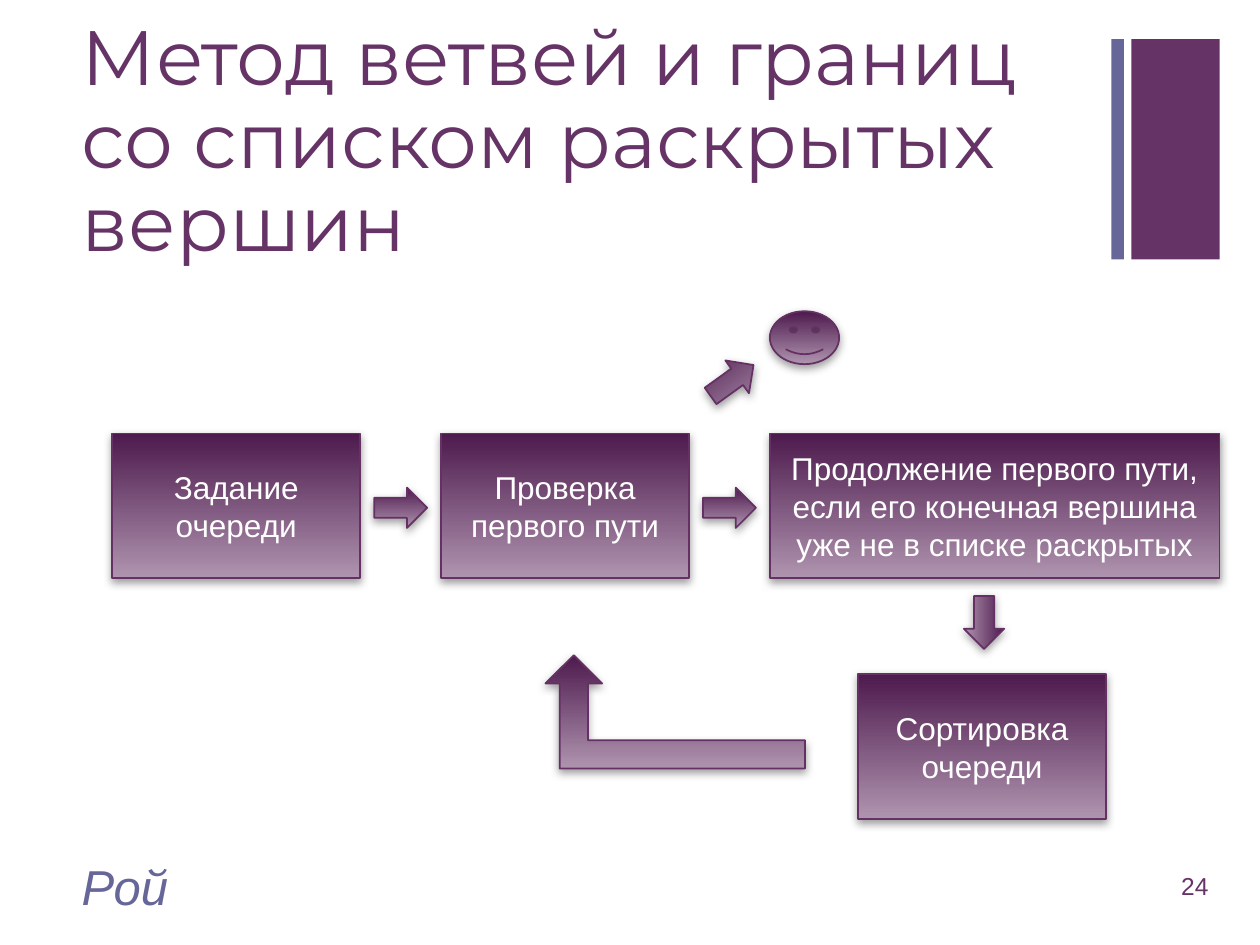
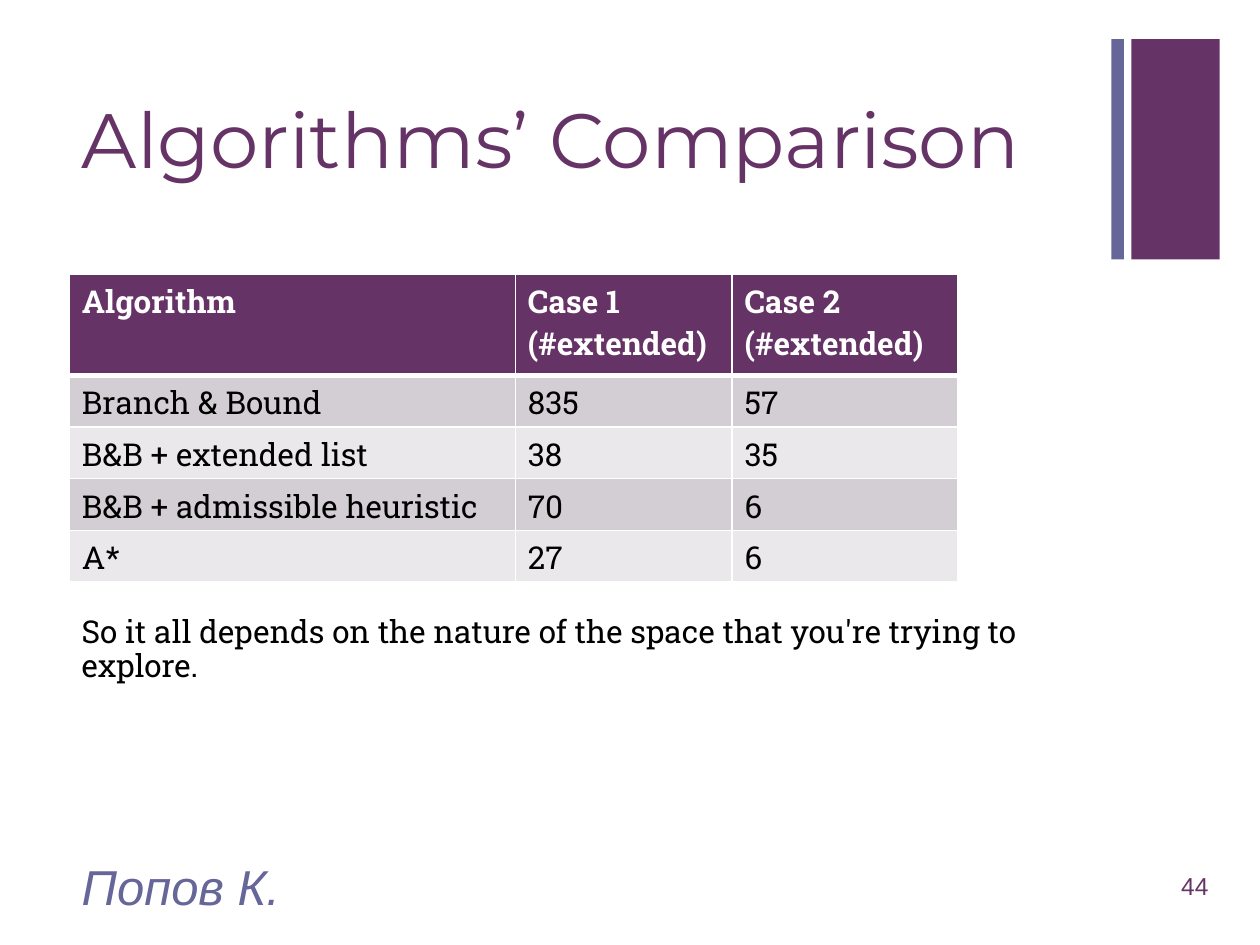
import lxml.etree
import pptx
import pptx.dml.color
import pptx.enum.shapes
import pptx.enum.text
import pptx.oxml.ns
import pptx.util

Inches = pptx.util.Inches
Pt = pptx.util.Pt
Color = pptx.dml.color.RGBColor.from_string
Shapes = pptx.enum.shapes.MSO_SHAPE
Align = pptx.enum.text.PP_ALIGN
Anchor = pptx.enum.text.MSO_ANCHOR
qn = pptx.oxml.ns.qn

THEME = {
    "plum": "663366",
    "slate": "666699",
    "outline": "653165",
    "gradient": ("4D1A4D", "AF94AF"),
    "shadow": "808080",
    "grid": "FFFFFF",
    "bands": ("EAE8EA", "D3CED3"),
    "title": {"color": "663366", "font": {"name": "Montserrat", "size": Pt(44)},
              "paragraph": {"alignment": Align.LEFT, "line_spacing": 0.9}},
    "author": {"color": "666699", "font": {"name": "Arial", "size": Pt(28), "italic": True},
               "paragraph": {"alignment": Align.LEFT}},
    "number": {"color": "663366", "font": {"name": "Arial", "size": Pt(14)},
               "paragraph": {"alignment": Align.RIGHT}},
    "step": {"color": "FFFFFF", "font": {"name": "Arial", "size": Pt(18)},
             "paragraph": {"alignment": Align.CENTER}},
    "head": {"color": "FFFFFF", "font": {"name": "Roboto Slab", "size": Pt(18), "bold": True},
             "paragraph": {"alignment": Align.LEFT}},
    "cell": {"color": "000000", "font": {"name": "Roboto Slab", "size": Pt(18), "bold": False},
             "paragraph": {"alignment": Align.LEFT}},
    "note": {"color": "000000", "font": {"name": "Roboto Slab", "size": Pt(18)},
             "paragraph": {"alignment": Align.LEFT, "line_spacing": 0.9}},
}


def write(text_frame, text, style_name, anchor=Anchor.MIDDLE):
    """Fill a text frame, one paragraph per line of text, in a theme style."""
    style = THEME[style_name]
    text_frame.text = text
    text_frame.word_wrap = True
    text_frame.vertical_anchor = anchor
    for paragraph in text_frame.paragraphs:
        for name, value in style["paragraph"].items():
            setattr(paragraph, name, value)
        for run in paragraph.runs:
            run.font.color.rgb = Color(style["color"])
            for name, value in style["font"].items():
                setattr(run.font, name, value)


def add_flow_shape(slide, kind, left, top, width, height, rotation=0):
    """Add a shape with the plum gradient, thin outline and soft shadow."""
    shape = slide.shapes.add_shape(
        kind, Inches(left), Inches(top), Inches(width), Inches(height))
    shape.rotation = rotation
    shape.fill.gradient()
    shape.fill.gradient_angle = 270
    for position, (stop, color) in enumerate(zip(shape.fill.gradient_stops, THEME["gradient"])):
        stop.position = position
        stop.color.rgb = Color(color)
    shape.line.color.rgb = Color(THEME["outline"])
    shape.line.width = Pt(1)
    shape.shadow.inherit = False
    effects = shape.element.spPr.find(qn("a:effectLst"))
    shadow = lxml.etree.SubElement(
        effects, qn("a:outerShdw"), blurRad=str(Pt(5)), dist=str(Pt(2)),
        dir="5400000", rotWithShape="0")
    color = lxml.etree.SubElement(shadow, qn("a:srgbClr"), val=THEME["shadow"])
    lxml.etree.SubElement(color, qn("a:alpha"), val="75000")
    return shape


presentation = pptx.Presentation()
presentation.slide_width = Inches(10)
presentation.slide_height = Inches(7.5)

# Shared frame: side bars, title, author and slide number
MARGIN = 0.55
FOOTER_TOP, FOOTER_HEIGHT = 6.83, 0.4
slides = []
for title, author, number in (
    ("Метод ветвей и границ со списком раскрытых вершин", "Рой", "24"),
    ("Algorithms’ Comparison", "Попов К.", "44"),
):
    slide = presentation.slides.add_slide(presentation.slide_layouts[5])
    slides.append(slide)
    for left, width, color in ((8.98, 0.7, "plum"), (8.82, 0.1, "slate")):
        bar = slide.shapes.add_shape(
            Shapes.RECTANGLE, Inches(left), Inches(0.31), Inches(width), Inches(1.75))
        bar.shadow.inherit = False
        bar.fill.solid()
        bar.fill.fore_color.rgb = Color(THEME[color])
        bar.line.fill.background()

    title_shape = slide.shapes.title
    title_place = {"left": MARGIN, "top": 0.53, "width": 8.26, "height": 1.22}
    for name, value in title_place.items():
        setattr(title_shape, name, Inches(value))
    title_shape.text_frame.auto_size = pptx.enum.text.MSO_AUTO_SIZE.NONE
    write(title_shape.text_frame, title, "title")

    for text, style_name, left, width in (
        (author, "author", MARGIN, 6.7), (number, "number", 9.08, 0.61),
    ):
        footer = slide.shapes.add_textbox(
            Inches(left), Inches(FOOTER_TOP), Inches(width), Inches(FOOTER_HEIGHT))
        write(footer.text_frame, text, style_name)

flow_slide, table_slide = slides

# Search loop: steps and the arrows between them
STEP_WIDTH, STEP_HEIGHT, STEP_TOP, STEP_PITCH = 1.97, 1.15, 3.44, 2.61
FIRST_STEP, SECOND_STEP, THIRD_STEP = (0.89 + STEP_PITCH * i for i in range(3))
for text, left, top, width in (
    ("Задание очереди", FIRST_STEP, STEP_TOP, STEP_WIDTH),
    ("Проверка первого пути", SECOND_STEP, STEP_TOP, STEP_WIDTH),
    ("Продолжение первого пути,\nесли его конечная вершина уже не в списке раскрытых",
     THIRD_STEP, STEP_TOP, 3.57),
    ("Сортировка очереди", 6.81, 5.35, STEP_WIDTH),
):
    step = add_flow_shape(flow_slide, Shapes.RECTANGLE, left, top, width, STEP_HEIGHT)
    write(step.text_frame, text, "step")

for left, top, rotation in (
    (2.97, 3.87, 0), (2.97 + STEP_PITCH, 3.87, 0), (5.6, 2.86, 324.2), (7.6, 4.78, 90),
):
    add_flow_shape(flow_slide, Shapes.RIGHT_ARROW, left, top, 0.42, 0.32, rotation)

add_flow_shape(flow_slide, Shapes.SMILEY_FACE, THIRD_STEP, 2.47, 0.55, 0.42)
return_arrow = add_flow_shape(flow_slide, Shapes.BENT_UP_ARROW, 4.33, 5.2, 2.06, 0.9)
return_arrow.element.spPr.get_or_add_xfrm().set("flipH", "1")

# Comparison table
rows = (
    ("Algorithm", "Case 1 (#extended)", "Case 2 (#extended)"),
    ("Branch & Bound", "835", "57"),
    ("B&B + extended list", "38", "35"),
    ("B&B + admissible heuristic", "70", "6"),
    ("A*", "27", "6"),
)
column_widths = (3.54, 1.72, 1.79)
HEAD_HEIGHT, ROW_HEIGHT = 0.8, 0.41
table = table_slide.shapes.add_table(
    len(rows), len(column_widths), Inches(MARGIN), Inches(2.18),
    Inches(sum(column_widths)), Inches(HEAD_HEIGHT + ROW_HEIGHT * (len(rows) - 1))).table
for column, width in zip(table.columns, column_widths):
    column.width = Inches(width)
for row_index, row in enumerate(rows):
    is_head = row_index == 0
    table.rows[row_index].height = Inches(HEAD_HEIGHT if is_head else ROW_HEIGHT)
    fill = THEME["plum"] if is_head else THEME["bands"][row_index % 2]
    thick_side = {0: "lnB", 1: "lnT"}.get(row_index)
    for column_index, text in enumerate(row):
        cell = table.cell(row_index, column_index)
        write(cell.text_frame, text, "head" if is_head else "cell", Anchor.TOP)
        properties = cell._tc.get_or_add_tcPr()
        for side in ("lnL", "lnR", "lnT", "lnB"):
            border = lxml.etree.SubElement(
                properties, qn("a:" + side), w=str(Pt(3 if side == thick_side else 1)))
            border_fill = lxml.etree.SubElement(border, qn("a:solidFill"))
            lxml.etree.SubElement(border_fill, qn("a:srgbClr"), val=THEME["grid"])
        cell.fill.solid()
        cell.fill.fore_color.rgb = Color(fill)

conclusion = table_slide.shapes.add_textbox(
    Inches(MARGIN), Inches(4.84), Inches(8.43), Inches(0.4))
write(conclusion.text_frame,
      "So it all depends on the nature of the space that you're trying to explore.",
      "note", Anchor.TOP)

presentation.save("out.pptx")
